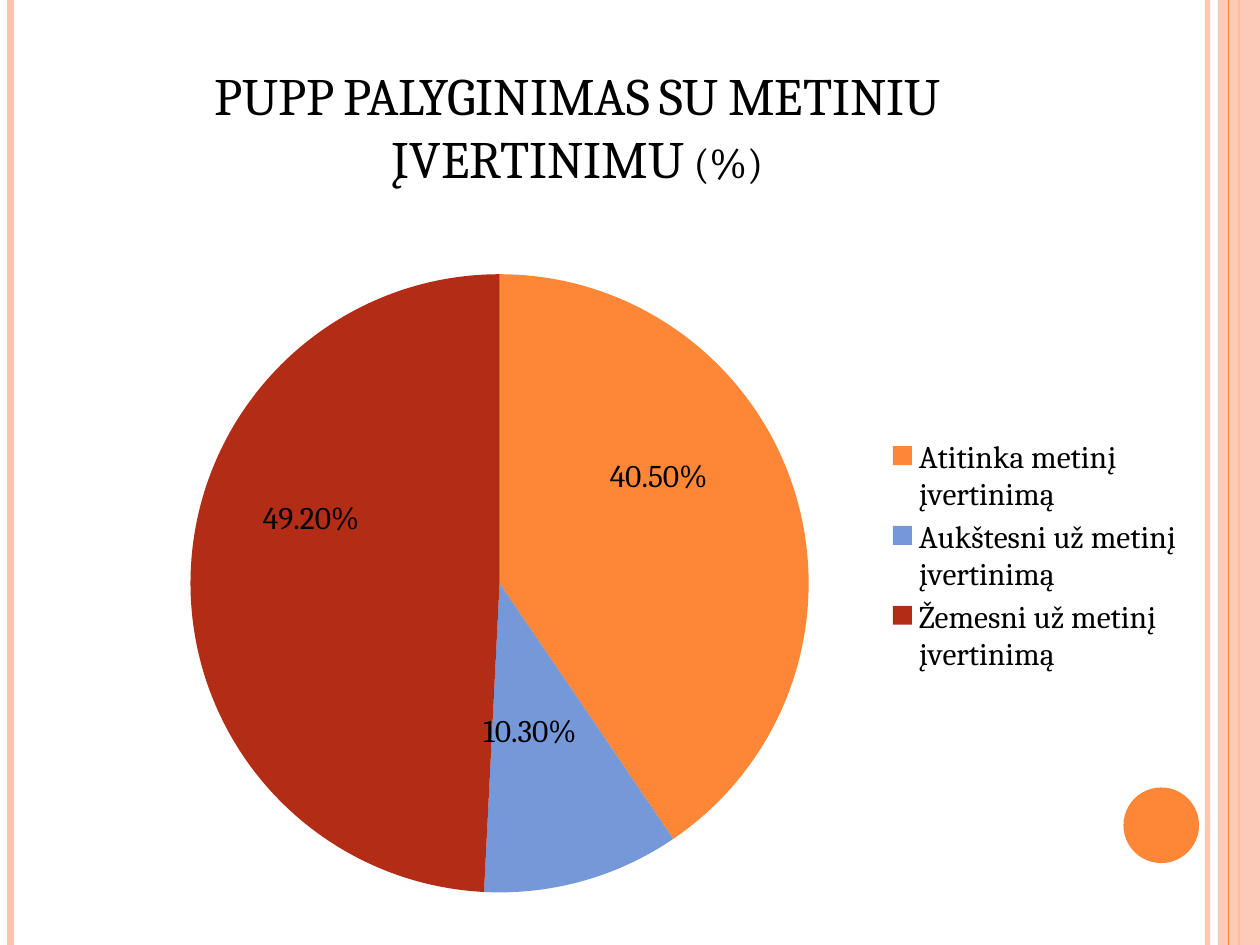
"""Builds a slide with a pie chart comparing exam results with annual grades."""
from lxml import etree
from pptx import Presentation
from pptx.chart.data import CategoryChartData
from pptx.dml.color import RGBColor
from pptx.enum.chart import XL_CHART_TYPE, XL_LABEL_POSITION, XL_LEGEND_POSITION
from pptx.enum.shapes import MSO_CONNECTOR, MSO_SHAPE
from pptx.enum.text import MSO_ANCHOR, PP_ALIGN
from pptx.oxml.ns import qn
from pptx.util import Pt

PIE = XL_CHART_TYPE.PIE
LABEL_CENTER = XL_LABEL_POSITION.CENTER
LEGEND_RIGHT = XL_LEGEND_POSITION.RIGHT
STRAIGHT = MSO_CONNECTOR.STRAIGHT
RECTANGLE, OVAL = MSO_SHAPE.RECTANGLE, MSO_SHAPE.OVAL
BOTTOM = MSO_ANCHOR.BOTTOM
CENTER = PP_ALIGN.CENTER

BLACK = RGBColor(0x00, 0x00, 0x00)
PEACH = RGBColor(0xFE, 0xC3, 0xAE)
ORANGE = RGBColor(0xFE, 0x86, 0x37)
BLUE = RGBColor(0x75, 0x98, 0xD9)
RED = RGBColor(0xB3, 0x2C, 0x16)

WIDTH, HEIGHT = 720, 540


def set_alpha(fill_parent, percent):
    color = next(fill_parent.iter(qn("a:srgbClr")))
    etree.SubElement(color, qn("a:alpha"), val=str(percent * 1000))


def manual_layout(**settings):
    layout = etree.Element(qn("c:layout"))
    manual = etree.SubElement(layout, qn("c:manualLayout"))
    for tag, value in settings.items():
        etree.SubElement(manual, qn(f"c:{tag}"), val=str(value))
    return layout


class SlideBuilder:
    def __init__(self, slide, font_name):
        self.slide = slide
        self.font_name = font_name

    def style_font(self, font, size):
        font.name = self.font_name
        font.size = Pt(size)
        font.color.rgb = BLACK

    def stripe(self, x, color, weight, alpha=100):
        stripe = self.slide.shapes.add_connector(STRAIGHT, Pt(x), Pt(0), Pt(x), Pt(HEIGHT))
        stripe.line.color.rgb = color
        stripe.line.width = Pt(weight)
        properties = stripe._element.spPr
        if alpha < 100:
            set_alpha(properties, alpha)
        etree.SubElement(properties, qn("a:effectLst"))

    def shape(self, kind, box, color, alpha=100):
        shape = self.slide.shapes.add_shape(kind, *map(Pt, box))
        shape.shadow.inherit = False
        shape.fill.solid()
        shape.fill.fore_color.rgb = color
        shape.line.fill.background()
        if alpha < 100:
            set_alpha(shape._element.spPr, alpha)

    def title(self, wording, box, size):
        frame = self.slide.shapes.add_textbox(*map(Pt, box)).text_frame
        frame.word_wrap = True
        frame.vertical_anchor = BOTTOM
        heading = frame.paragraphs[0]
        heading.alignment = CENTER
        self.style_font(heading.font, size)
        run = heading.add_run()
        run.text = wording
        run._r.get_or_add_rPr().set("cap", "small")

    def pie(self, slices, box, size):
        data = CategoryChartData(number_format="0.00%")
        data.categories = [name for name, *_ in slices]
        data.add_series("Series 1", [share for _, share, *_ in slices])
        chart = self.slide.shapes.add_chart(PIE, *map(Pt, box), data).chart
        self.style_font(chart.font, size)
        chart.has_title = False
        chart.has_legend = True
        chart.legend.position = LEGEND_RIGHT
        chart.legend.include_in_layout = False

        plot = chart.plots[0]
        plot.vary_by_categories = True
        plot.has_data_labels = True
        labels = plot.data_labels
        labels.show_value = True
        labels.show_percentage = False
        labels.number_format = "0.00%"
        labels.number_format_is_linked = False
        labels.position = LABEL_CENTER
        for index, (_, _, color, shift) in enumerate(slices):
            point = plot.series[0].points[index]
            point.format.fill.solid()
            point.format.fill.fore_color.rgb = color
            point.data_label.position = LABEL_CENTER
            label = point.data_label._get_or_add_dLbl()
            label.insert(1, manual_layout(x=shift[0], y=shift[1]))

        area = chart._chartSpace.chart.plotArea
        for layout in area.findall(qn("c:layout")):
            area.remove(layout)
        area.insert(0, manual_layout(layoutTarget="inner", xMode="edge", yMode="edge",
                                     x=0.06, y=0.08, w=0.65, h=0.92))


def main():
    presentation = Presentation()
    presentation.slide_width, presentation.slide_height = Pt(WIDTH), Pt(HEIGHT)
    slide = presentation.slides.add_slide(presentation.slide_layouts[6])
    builder = SlideBuilder(slide, "Cambria")

    builder.stripe(690, PEACH, 3, alpha=93)
    builder.stripe(6, PEACH, 4.5)
    builder.stripe(708, ORANGE, 1.5)
    builder.shape(RECTANGLE, (696, 0, 24, HEIGHT), PEACH, alpha=87)
    builder.stripe(702, ORANGE, 0.75)
    builder.shape(OVAL, (642, 450, 43.2, 43.2), ORANGE)

    builder.title("PUPP PALYGINIMAS SU METINIU ĮVERTINIMU (%)", (36, 21.6, 588, 90), 30)
    builder.pie([
        ("Atitinka metinį įvertinimą", 0.405, ORANGE, (0.01, -0.09)),
        ("Aukštesni už metinį įvertinimą", 0.103, BLUE, (-0.01, 0)),
        ("Žemesni už metinį įvertinimą", 0.492, RED, (-0.03, -0.09)),
    ], (36, 126, 648, 384), 18)
    presentation.save("out.pptx")


if __name__ == "__main__":
    main()
